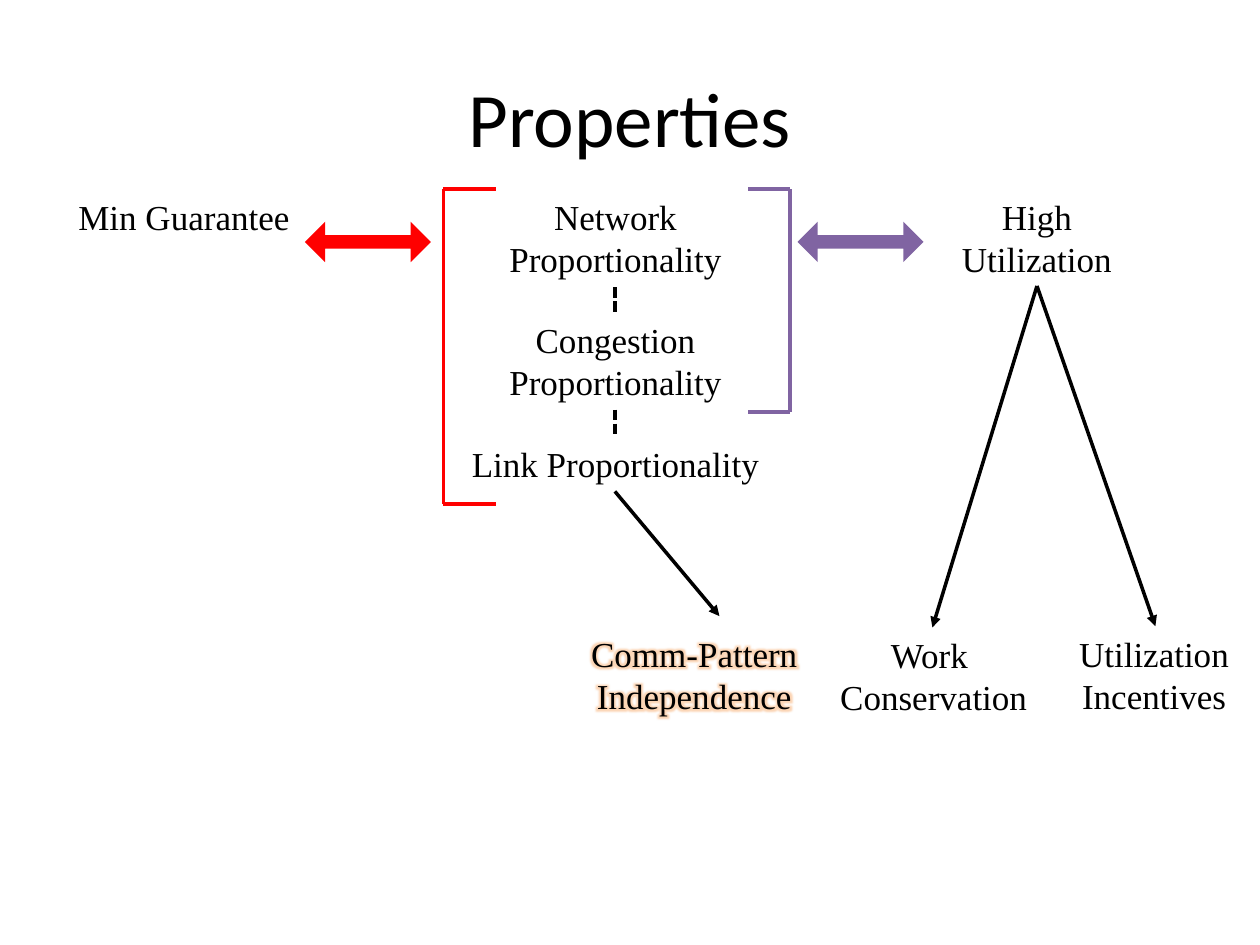
from lxml.etree import SubElement
from pptx import Presentation
from pptx.dml.color import RGBColor
from pptx.enum.dml import MSO_LINE
from pptx.enum.shapes import MSO_CONNECTOR, MSO_SHAPE
from pptx.enum.text import MSO_ANCHOR, MSO_AUTO_SIZE, PP_ALIGN
from pptx.oxml import parse_xml
from pptx.oxml.ns import qn
from pptx.util import Inches, Pt

COLORS = {"text": "000000", "min": "FF0000", "util": "8064A2", "glow": "F79646"}
GLOW = (
    '<a:effectLst xmlns:a="http://schemas.openxmlformats.org/drawingml/2006/main">'
    '<a:glow rad="101600"><a:srgbClr val="{}"><a:alpha val="40000"/></a:srgbClr>'
    '</a:glow></a:effectLst>'
)


class Deck:
    """Holds the style and the current slide, and draws each kind of element."""

    def __init__(self, prs):
        self.heading_font, self.body_font = "Calibri", "Times New Roman"
        self.heading_size, self.body_size = Pt(44), Pt(20)
        self.line_width = Pt(2)
        self.slide = prs.slides.add_slide(prs.slide_layouts[5])

    def color(self, name):
        return RGBColor.from_string(COLORS[name])

    def run(self, p, text, font, size):
        p.alignment = PP_ALIGN.CENTER
        r = p.add_run()
        r.text = text
        r.font.name, r.font.size = font, size
        r.font.color.rgb = self.color("text")
        return r

    def title(self, text):
        sp = self.slide.shapes.title
        sp.left, sp.top, sp.width, sp.height = map(Inches, (0.5, 0.3, 9, 1.25))
        tf = sp.text_frame
        tf.vertical_anchor = MSO_ANCHOR.MIDDLE
        self.run(tf.paragraphs[0], text, self.heading_font, self.heading_size)

    def label(self, lines, x, y, w, h=0.77, wrap=True, glow=False):
        sp = self.slide.shapes.add_textbox(*map(Inches, (x, y, w, h)))
        tf = sp.text_frame
        tf.word_wrap = wrap
        tf.auto_size = MSO_AUTO_SIZE.SHAPE_TO_FIT_TEXT
        for i, text in enumerate(lines):
            p = tf.add_paragraph() if i else tf.paragraphs[0]
            r = self.run(p, text, self.body_font, self.body_size)
            if glow:
                fill = r.font._element.find(qn("a:solidFill"))
                fill.addnext(parse_xml(GLOW.format(COLORS["glow"])))

    def line(self, start, end, color="text", arrow=False, dashed=False, shapes=None):
        shapes = self.slide.shapes if shapes is None else shapes
        cxn = shapes.add_connector(MSO_CONNECTOR.STRAIGHT, *map(Inches, (*start, *end)))
        cxn.line.width = self.line_width
        cxn.line.color.rgb = self.color(color)
        if dashed:
            cxn.line.dash_style = MSO_LINE.SQUARE_DOT
        if arrow:
            SubElement(cxn.line._get_or_add_ln(), qn("a:tailEnd"), type="triangle")
        SubElement(cxn._element.spPr, qn("a:effectLst"))

    def bracket(self, spine, tip, top, bottom, color):
        shapes = self.slide.shapes.add_group_shape().shapes
        for y in (top, bottom):
            self.line((spine, y), (tip, y), color, shapes=shapes)
        self.line((spine, top), (spine, bottom), color, shapes=shapes)

    def double_arrow(self, x, y, color):
        sp = self.slide.shapes.add_shape(
            MSO_SHAPE.LEFT_RIGHT_ARROW, Inches(x), Inches(y), Inches(1), Inches(0.32))
        sp.adjustments[0], sp.adjustments[1] = 0.33, 0.5
        sp.shadow.inherit = False
        sp.fill.solid()
        sp.fill.fore_color.rgb = self.color(color)
        sp.line.fill.background()


def main():
    prs = Presentation()
    prs.slide_width, prs.slide_height = Inches(10), Inches(7.5)
    deck = Deck(prs)
    deck.title("Properties")

    top, center = 1.5, 4.88
    deck.bracket(3.52, 3.94, top, 4, "min")
    deck.bracket(6.27, 5.94, top, 3.27, "util")
    deck.double_arrow(2.42, 1.76, "min")
    deck.double_arrow(6.33, 1.76, "util")

    deck.label(["Min Guarantee"], 0.5, top, 1.92)
    deck.label(["Network Proportionality"], 3.5, top, 2.77)
    deck.label(["Congestion Proportionality"], 3.5, 2.48, 2.77)
    deck.label(["Link Proportionality"], 3.52, 3.46, 2.73, 0.44)
    deck.label(["High Utilization"], 7.25, top, 1.96)
    deck.label(["Work ", "Conservation"], 6.42, 4.98, 1.98)
    deck.label(["Utilization", "Incentives"], 8.43, 4.97, 1.46, wrap=False)
    deck.label(["Comm-Pattern", "Independence"], 4.5, 4.97, 2.02, wrap=False, glow=True)

    for y, end in ((2.28, 2.48), (3.25, 3.46)):
        deck.line((center, y), (center, end), dashed=True)
    deck.line((center, 3.9), (5.71, 4.89), arrow=True)
    for end in ((7.4, 4.98), (9.17, 4.97)):
        deck.line((8.23, 2.27), end, arrow=True)

    prs.save("out.pptx")


if __name__ == "__main__":
    main()
